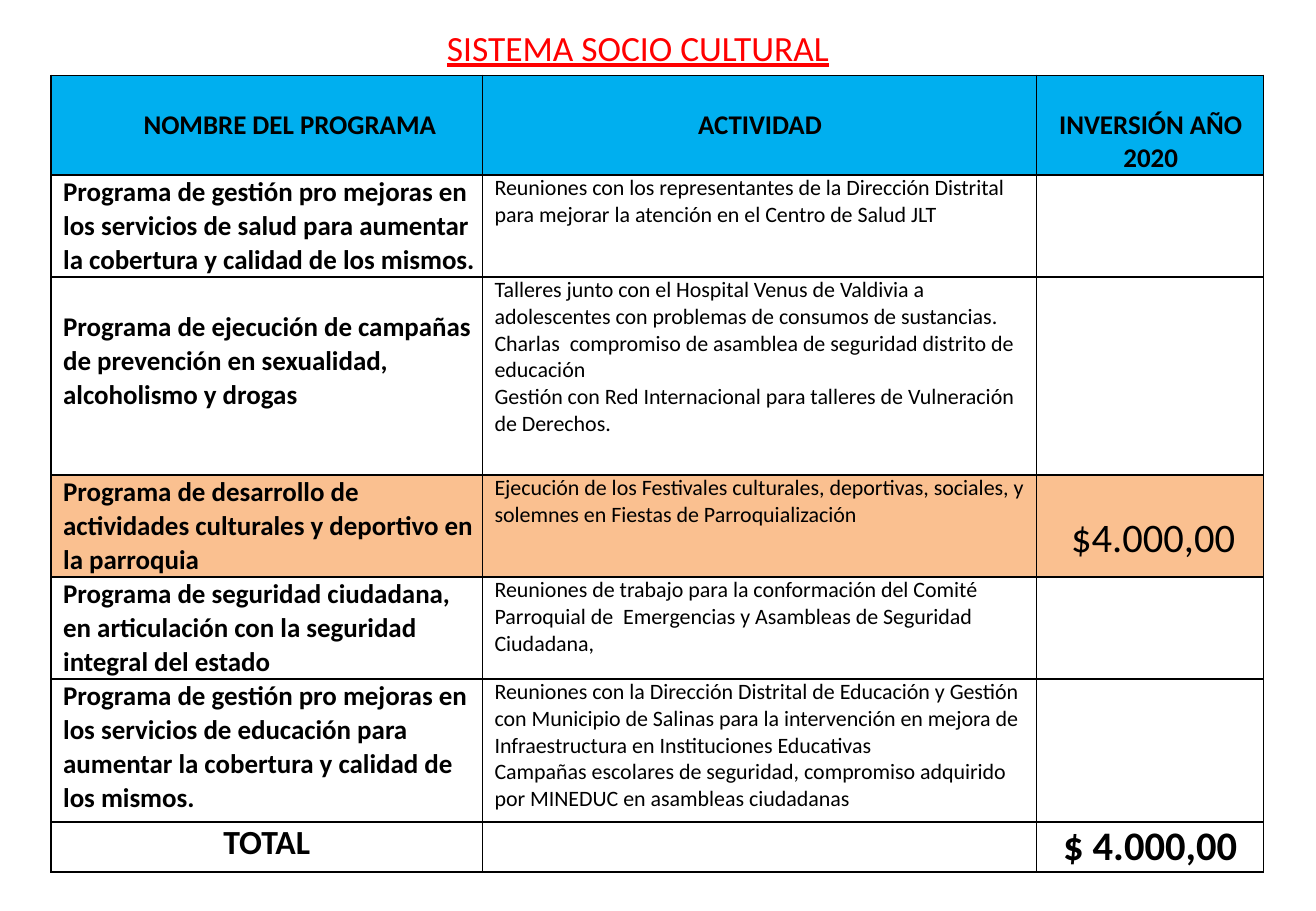
import pptx
import pptx.util
import pptx.dml.color
import pptx.enum.text
import pptx.oxml
from dataclasses import dataclass

ALIGN = pptx.enum.text.PP_ALIGN
ANCHOR = pptx.enum.text.MSO_ANCHOR
PX = 9144


@dataclass(frozen=True)
class Theme:
    font: str = "Calibri"
    ink: str = "000000"
    title: str = "FF0000"
    header: str = "00AFEF"
    plain: str = "FFFFFF"
    funded: str = "FAC090"
    title_size: int = 21
    program_size: int = 16
    activity_size: int = 13
    total_size: int = 20
    amount_size: int = 24


class Page:
    def __init__(self, deck, theme):
        self.theme = theme
        self.slide = deck.slides.add_slide(deck.slide_layouts[6])

    def fill_text(self, frame, text, size, color, bold=False, underline=None,
                  align=ALIGN.LEFT, spacing=None):
        frame.text = text
        frame.word_wrap = True
        for para in frame.paragraphs:
            para.alignment = align
            para.line_spacing = spacing
            for span in para.runs:
                span.font.name = self.theme.font
                span.font.size = pptx.util.Pt(size)
                span.font.bold = bold
                span.font.underline = underline
                span.font.color.rgb = pptx.dml.color.RGBColor.from_string(color)

    def inset(self, item, left, top, right, bottom):
        item.margin_left, item.margin_top = left * PX, top * PX
        item.margin_right, item.margin_bottom = right * PX, bottom * PX
        item.vertical_anchor = ANCHOR.MIDDLE

    def heading(self, text, left, top, width, height):
        box = self.slide.shapes.add_textbox(left * PX, top * PX, width * PX, height * PX)
        self.inset(box.text_frame, 29, 5, 11, 37)
        self.fill_text(box.text_frame, text, self.theme.title_size, self.theme.title,
                       underline=True, align=ALIGN.CENTER)

    def border(self, cell):
        properties = cell._tc.get_or_add_tcPr()
        namespace = "http://schemas.openxmlformats.org/drawingml/2006/main"
        for side in ("lnL", "lnR", "lnT", "lnB"):
            properties.append(pptx.oxml.parse_xml(
                f'<a:{side} xmlns:a="{namespace}" w="12700"><a:solidFill>'
                f'<a:srgbClr val="{self.theme.ink}"/></a:solidFill></a:{side}>'))

    def cell(self, cell, text, fill, left=0, top=0, anchor=ANCHOR.TOP, **style):
        self.border(cell)
        cell.fill.solid()
        cell.fill.fore_color.rgb = pptx.dml.color.RGBColor.from_string(fill)
        self.inset(cell, left, top, 0, 0)
        cell.vertical_anchor = anchor
        if text:
            self.fill_text(cell.text_frame, text, color=self.theme.ink, **style)

    def table(self, left, top, widths, heights):
        frame = self.slide.shapes.add_table(
            len(heights), len(widths), left * PX, top * PX,
            sum(widths) * PX, sum(heights) * PX)
        table = frame.table
        table.first_row = table.horz_banding = False
        for column, width in zip(table.columns, widths):
            column.width = width * PX
        for row, height in zip(table.rows, heights):
            row.height = height * PX
        return table


HEADERS = [("NOMBRE DEL PROGRAMA", 38, 0), ("ACTIVIDAD", 1, 0), ("INVERSIÓN AÑO 2020", 1, 27)]
PROGRAMS = [
    ("Programa de gestión pro mejoras en los servicios de salud para aumentar la cobertura y calidad de los mismos.",
     ["Reuniones con los representantes de la Dirección Distrital para mejorar la atención en el Centro de Salud JLT"],
     "", 0),
    ("Programa de ejecución de campañas de prevención en sexualidad, alcoholismo y drogas",
     ["Talleres junto con el Hospital Venus de Valdivia a adolescentes con problemas de consumos de sustancias.",
      "Charlas  compromiso de asamblea de seguridad distrito de educación",
      "Gestión con Red Internacional para talleres de Vulneración de Derechos."],
     "", 27),
    ("Programa de desarrollo de actividades culturales y deportivo en la parroquia",
     ["Ejecución de los Festivales culturales, deportivas, sociales, y solemnes en Fiestas de Parroquialización"],
     "$4.000,00", 0),
    ("Programa de seguridad ciudadana, en articulación con la seguridad integral del estado",
     ["Reuniones de trabajo para la conformación del Comité Parroquial de  Emergencias y Asambleas de Seguridad Ciudadana,"],
     "", 0),
    ("Programa de gestión pro mejoras en los servicios de educación para aumentar la cobertura y calidad de los mismos.",
     ["Reuniones con la Dirección Distrital de Educación y Gestión con Municipio de Salinas para la intervención en mejora de Infraestructura en Instituciones Educativas",
      "Campañas escolares de seguridad, compromiso adquirido por MINEDUC en asambleas ciudadanas"],
     "", 0),
]


def main():
    theme = Theme()
    deck = pptx.Presentation()
    deck.slide_width, deck.slide_height = 1083 * PX, 750 * PX
    page = Page(deck, theme)
    table = page.table(42, 62, [355, 456, 187], [82, 84, 163, 84, 84, 118, 41])

    for column, (text, left, top) in enumerate(HEADERS):
        page.cell(table.cell(0, column), text, theme.header, left, top, ANCHOR.MIDDLE,
                  size=theme.program_size, bold=True, align=ALIGN.CENTER)

    for row, (program, activities, amount, top) in enumerate(PROGRAMS, 1):
        fill = theme.funded if amount else theme.plain
        page.cell(table.cell(row, 0), program, fill, 10, top,
                  size=theme.program_size, bold=True, spacing=1.03)
        page.cell(table.cell(row, 1), "\n".join(activities), fill, 10,
                  size=theme.activity_size)
        page.cell(table.cell(row, 2), amount, fill, 5, 22, ANCHOR.MIDDLE,
                  size=theme.amount_size, align=ALIGN.CENTER)

    totals = [("TOTAL", theme.total_size), ("", theme.total_size),
              ("$ 4.000,00", theme.amount_size)]
    for column, (text, size) in enumerate(totals):
        page.cell(table.cell(len(PROGRAMS) + 1, column), text, theme.plain,
                  size=size, bold=True, align=ALIGN.CENTER)

    page.heading("SISTEMA SOCIO CULTURAL", 169, 16, 694, 78)
    deck.save("out.pptx")


if __name__ == "__main__":
    main()
